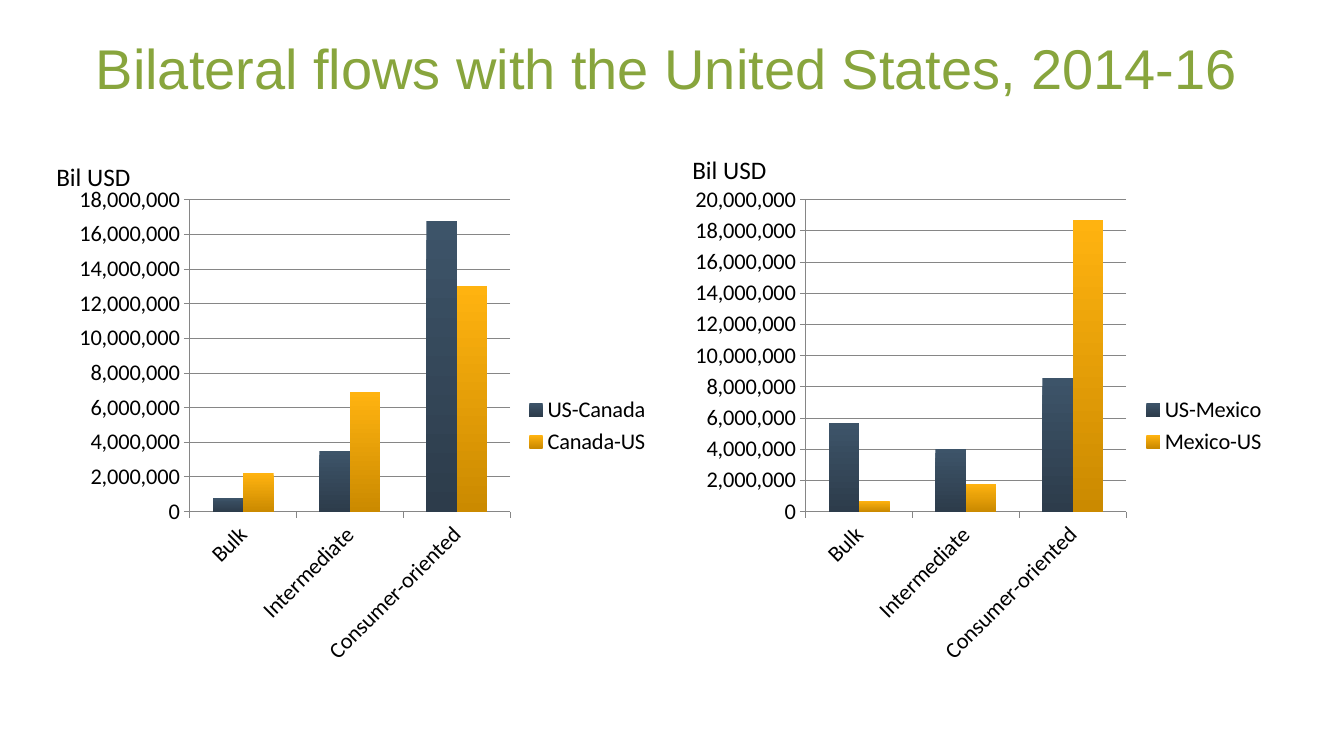
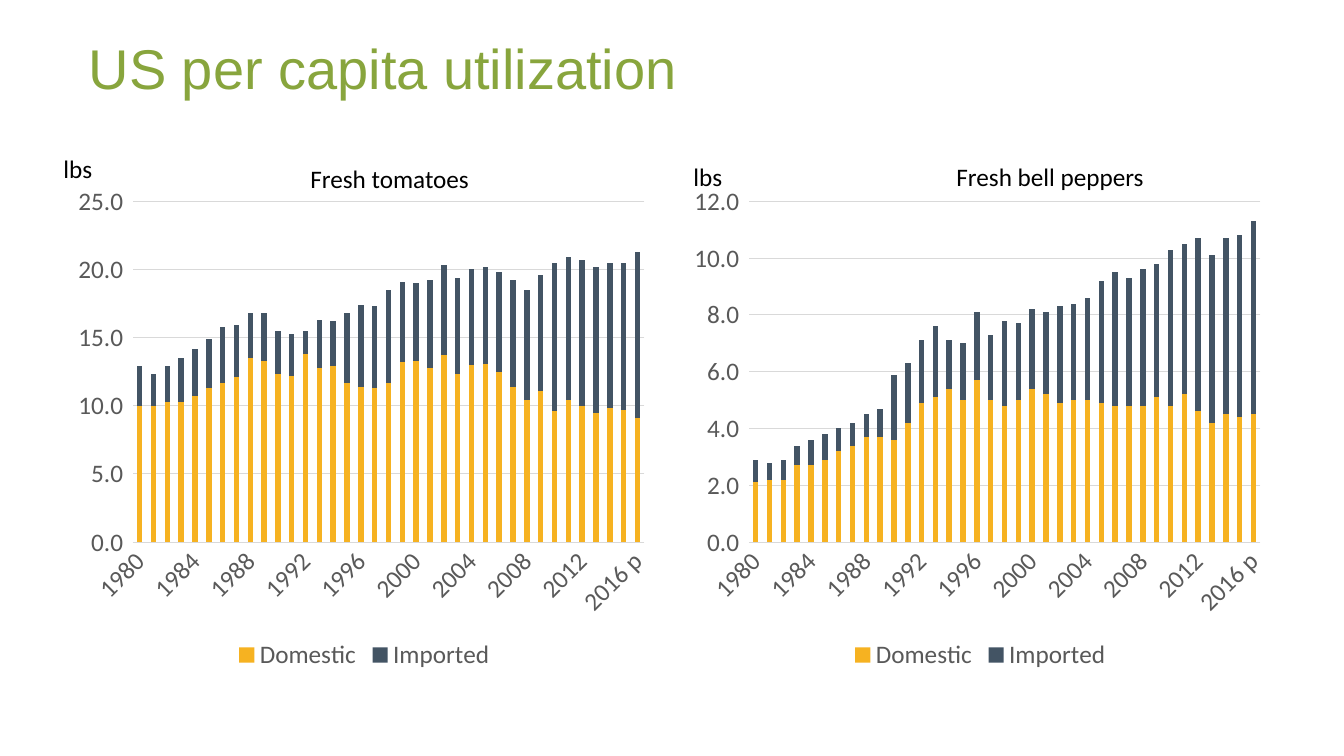
from lxml import etree
from pptx import Presentation
from pptx.chart.data import CategoryChartData
from pptx.dml.color import RGBColor
from pptx.enum.chart import XL_CHART_TYPE as CHART, XL_LEGEND_POSITION as LEGEND
from pptx.enum.chart import XL_TICK_MARK as TICK
from pptx.enum.text import MSO_ANCHOR, MSO_AUTO_SIZE, PP_ALIGN
from pptx.oxml.ns import qn
from pptx.util import Pt

COLORS = {
    "title": "88A53D", "text": "000000", "muted": "595959",
    "navy": "435464", "gold": "F6B221", "grid": "D9D9D9", "axis": "868686",
    "navy_top": "3D5469", "navy_end": "2D3C4B",
    "gold_top": "FFB310", "gold_end": "CB8A00",
}
CHART_LEFTS = (48.2, 488.2)
CHART_TOP, CHART_W, CHART_H = 126, 424, 356.4

# Everything that differs between the two kinds of chart
FLOWS = {
    "type": CHART.COLUMN_CLUSTERED, "size": 16, "color": "text", "tick": TICK.OUTSIDE,
    "grid": "axis", "value_line": True, "format": "#,##0", "legend": LEGEND.RIGHT,
    "overlap": 0, "label_step": 1, "plot": (0.206, 0.047, 0.54, 0.625),
    "fills": (("navy_top", "navy_end"), ("gold_top", "gold_end")),
}
UTILIZATION = {
    "type": CHART.COLUMN_STACKED, "size": 18, "color": "muted", "tick": TICK.NONE,
    "grid": "grid", "value_line": False, "format": "#,##0.0_);\\(#,##0.0\\)",
    "legend": LEGEND.BOTTOM, "overlap": 100, "label_step": 4,
    "plot": (0.11, 0.05, 0.862, 0.683), "fills": (("gold",), ("navy",)),
}

PRODUCTS = ["Bulk", "Intermediate", "Consumer-oriented"]
YEARS = [str(year) for year in range(1980, 2016)] + ["2016 p"]

CANADA = {"US-Canada": [800000, 3500000, 16800000],
          "Canada-US": [2200000, 6900000, 13000000]}
MEXICO = {"US-Mexico": [5700000, 4000000, 8600000],
          "Mexico-US": [700000, 1800000, 18700000]}
TOMATOES = {
    "Domestic": [10, 10, 10.3, 10.3, 10.7, 11.3, 11.7, 12.1, 13.5, 13.3, 12.3, 12.2, 13.8,
                 12.8, 12.9, 11.7, 11.4, 11.3, 11.7, 13.2, 13.3, 12.8, 13.7, 12.3, 13,
                 13.1, 12.5, 11.4, 10.4, 11.1, 9.6, 10.4, 10, 9.5, 9.8, 9.7, 9.1],
    "Imported": [2.9, 2.3, 2.6, 3.2, 3.5, 3.6, 4.1, 3.8, 3.3, 3.5, 3.2, 3.1, 1.7,
                 3.5, 3.3, 5.1, 6, 6, 6.8, 5.9, 5.7, 6.4, 6.6, 7.1, 7,
                 7.1, 7.3, 7.8, 8.1, 8.5, 10.9, 10.5, 10.7, 10.7, 10.7, 10.8, 12.2],
}
PEPPERS = {
    "Domestic": [2.1, 2.2, 2.2, 2.7, 2.7, 2.9, 3.2, 3.4, 3.7, 3.7, 3.6, 4.2, 4.9,
                 5.1, 5.4, 5, 5.7, 5, 4.8, 5, 5.4, 5.2, 4.9, 5, 5,
                 4.9, 4.8, 4.8, 4.8, 5.1, 4.8, 5.2, 4.6, 4.2, 4.5, 4.4, 4.5],
    "Imported": [0.8, 0.6, 0.7, 0.7, 0.9, 0.9, 0.8, 0.8, 0.8, 1, 2.3, 2.1, 2.2,
                 2.5, 1.7, 2, 2.4, 2.3, 3, 2.7, 2.8, 2.9, 3.4, 3.4, 3.6,
                 4.3, 4.7, 4.5, 4.8, 4.7, 5.5, 5.3, 6.1, 5.9, 6.2, 6.4, 6.8],
}


def rgb(name):
    return RGBColor.from_string(COLORS[name])


def set_attrs(obj, **values):
    for name, value in values.items():
        setattr(obj, name, value)


def set_font(font, size, color, name="Calibri"):
    set_attrs(font, size=Pt(size), name=name, bold=False)
    font.color.rgb = rgb(color)


def set_line(line, color):
    line.width = Pt(0.75)
    line.color.rgb = rgb(color)


def add_title_slide(prs, text, left):
    """Add a title-only slide with the shared title style."""
    s = prs.slides.add_slide(prs.slide_layouts[5])
    title = s.shapes.title
    set_attrs(title, left=Pt(left), top=Pt(13.7), width=Pt(864), height=Pt(68.4))
    tf = title.text_frame
    tf.text = text
    set_attrs(tf, vertical_anchor=MSO_ANCHOR.MIDDLE, auto_size=MSO_AUTO_SIZE.NONE,
              word_wrap=True)
    p = tf.paragraphs[0]
    p.alignment = PP_ALIGN.LEFT
    set_font(p.runs[0].font, 40, "title", "Arial")
    return s


def add_label(s, text, left, top, width):
    tf = s.shapes.add_textbox(Pt(left), Pt(top), Pt(width), Pt(29)).text_frame
    tf.text = text
    set_attrs(tf, word_wrap=False, auto_size=MSO_AUTO_SIZE.SHAPE_TO_FIT_TEXT)
    set_font(tf.paragraphs[0].runs[0].font, 18, "text")


def fill_series(fill, names):
    """Fill solid with one colour, or fade from top to bottom with two."""
    if len(names) == 1:
        fill.solid()
        fill.fore_color.rgb = rgb(names[0])
        return
    fill.gradient()
    fill.gradient_angle = 270
    for stop, name in zip(fill.gradient_stops, names):
        stop.color.rgb = rgb(name)


def place_plot(chart, box):
    """Fix the inner plot area as fractions of the chart."""
    area = chart.plots[0]._element.getparent()
    for old in area.findall(qn("c:layout")):
        area.remove(old)
    layout = etree.Element(qn("c:layout"))
    manual = etree.SubElement(layout, qn("c:manualLayout"))
    settings = [("layoutTarget", "inner"), ("xMode", "edge"), ("yMode", "edge")]
    for tag, value in settings + list(zip("xywh", box)):
        etree.SubElement(manual, qn(f"c:{tag}")).set("val", str(value))
    area.insert(0, layout)


def slant_labels(axis, step):
    """Turn category labels by 45 degrees and show every step-th one."""
    axis._element.find(qn("c:txPr")).find(qn("a:bodyPr")).set("rot", "-2700000")
    skip = etree.Element(qn("c:tickLblSkip"))
    skip.set("val", str(step))
    axis._element.find(qn("c:noMultiLvlLbl")).addprevious(skip)


def add_column_chart(s, left, style, categories, series, top_value, unit):
    data = CategoryChartData(number_format=style["format"])
    data.categories = categories
    for name, values in series.items():
        data.add_series(name, values)
    chart = s.shapes.add_chart(style["type"], Pt(left), Pt(CHART_TOP), Pt(CHART_W),
                               Pt(CHART_H), data).chart
    set_attrs(chart, has_title=False, has_legend=True)
    set_font(chart.font, style["size"], style["color"])
    set_attrs(chart.legend, position=style["legend"], include_in_layout=False)
    set_font(chart.legend.font, style["size"], style["color"])

    plot = chart.plots[0]
    set_attrs(plot, gap_width=150, overlap=style["overlap"], vary_by_categories=False)
    for ser, names in zip(plot.series, style["fills"]):
        fill_series(ser.format.fill, names)

    cat, val = chart.category_axis, chart.value_axis
    for axis in (cat, val):
        set_attrs(axis, major_tick_mark=style["tick"], minor_tick_mark=TICK.NONE)
        set_font(axis.tick_labels.font, style["size"], style["color"])
        set_line(axis.format.line, style["grid"])
    set_attrs(val, minimum_scale=0, maximum_scale=top_value, major_unit=unit,
              has_major_gridlines=True)
    set_attrs(val.tick_labels, number_format=style["format"],
              number_format_is_linked=False)
    set_line(val.major_gridlines.format.line, style["grid"])
    if not style["value_line"]:
        val.format.line.fill.background()
    slant_labels(cat, style["label_step"])
    place_plot(chart, style["plot"])


def main():
    prs = Presentation()
    set_attrs(prs, slide_width=Pt(960), slide_height=Pt(540))
    left, right = CHART_LEFTS

    s = add_title_slide(prs, "Bilateral flows with the United States, 2014-16", 61.2)
    add_column_chart(s, left, FLOWS, PRODUCTS, CANADA, 18000000, 2000000)
    add_column_chart(s, right, FLOWS, PRODUCTS, MEXICO, 20000000, 2000000)
    add_label(s, "Bil USD", 33.1, 111.6, 68.4)
    add_label(s, "Bil USD", 487.4, 106.6, 68.4)

    s = add_title_slide(prs, "US per capita utilization", 56.2)
    add_column_chart(s, left, UTILIZATION, YEARS, TOMATOES, 25, 5)
    add_column_chart(s, right, UTILIZATION, YEARS, PEPPERS, 12, 2)
    add_label(s, "Fresh tomatoes", 214.6, 113, 129.6)
    add_label(s, "Fresh bell peppers", 676.1, 111.6, 150.5)
    add_label(s, "lbs", 38.2, 105.8, 35.3)
    add_label(s, "lbs", 488.2, 111.6, 35.3)

    prs.save("out.pptx")


if __name__ == "__main__":
    main()
